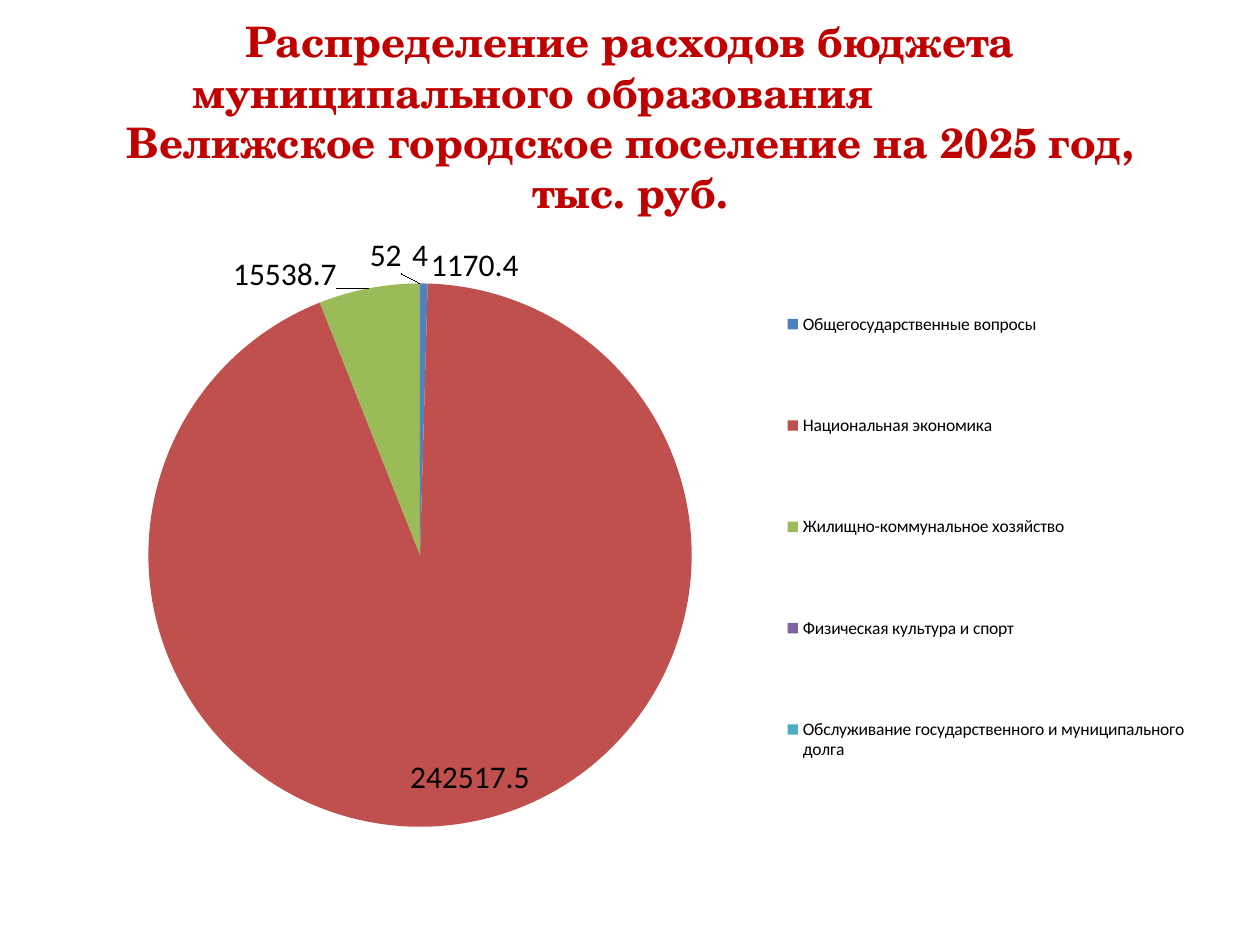
from lxml.etree import SubElement as Sub
from pptx import Presentation
from pptx.chart.data import CategoryChartData as Data
from pptx.dml.color import RGBColor as RGB
from pptx.enum.chart import XL_CHART_TYPE as Kind, XL_LABEL_POSITION as Pos
from pptx.enum.chart import XL_LEGEND_POSITION as Side
from pptx.enum.text import MSO_ANCHOR as Anchor, PP_ALIGN as Align
from pptx.oxml.ns import qn
from pptx.util import Pt

TITLE = [
    ("Распределение расходов бюджета", 0),
    ("муниципального образования", 111),
    ("Велижское городское поселение на 2025 год, тыс. руб.", 0),
]
OUT, IN = Pos.OUTSIDE_END, Pos.INSIDE_END
COSTS = [
    ("Общегосударственные вопросы", 1170.4, "4F81BD", OUT, (29, 4.5)),
    ("Национальная экономика", 242517.5, "C0504D", IN, (36.5, -11)),
    ("Жилищно-коммунальное хозяйство", 15538.7, "9BBB59", OUT, (-17.5, 7)),
    ("Физическая культура и спорт", 52, "8064A2", OUT, (-19.5, -1.2)),
    ("Обслуживание государственного и муниципального долга", 4, "4BACC6", OUT, (0, -1.2)),
]
THEME = {
    "title": {"name": "TeX Gyre Schola", "size": Pt(24), "bold": True, "color": "C00000"},
    "label": {"name": "Calibri", "size": Pt(18), "color": "000000"},
    "legend": {"name": "Calibri", "size": Pt(10), "color": "000000"},
}
PAGE = (720, 540)
HEAD = (36, 21.6, 648, 90)
PLOT = (36, 126, 648, 356.4)
PIE = (48.8, 36, 310.5, 310.5)
KEY = (410.8, 7, 233, 347.5)
EDGE = {"xMode": "edge", "yMode": "edge"}


def apply(obj, vals):
    for key, val in vals.items():
        setattr(obj, key, val)


def style(font, role):
    look = dict(THEME[role])
    font.color.rgb = RGB.from_string(look.pop("color"))
    apply(font, look)


def place(node, prior, box, modes):
    for old in node.findall(qn("c:layout")):
        node.remove(old)
    frame = Sub(node, qn("c:layout"))
    if prior is None:
        node.insert(0, frame)
    else:
        prior.addnext(frame)
    spot = Sub(frame, qn("c:manualLayout"))
    parts = {key: val / full for key, val, full in zip("xywh", box, PLOT[2:] * 2)}
    for key, val in {**modes, **parts}.items():
        Sub(spot, qn(f"c:{key}")).set("val", str(val))


def add_title(slide):
    frame = slide.shapes.add_textbox(*map(Pt, HEAD)).text_frame
    apply(frame, {"word_wrap": True, "vertical_anchor": Anchor.MIDDLE})
    for i, (text, right) in enumerate(TITLE):
        para = frame.add_paragraph() if i else frame.paragraphs[0]
        para.alignment = Align.CENTER
        para._p.get_or_add_pPr().set("marR", str(Pt(right)))
        run = para.add_run()
        run.text = text
        style(run.font, "title")


def add_pie(slide):
    data = Data()
    data.categories = [row[0] for row in COSTS]
    data.add_series("Series 1", [row[1] for row in COSTS])
    chart = slide.shapes.add_chart(Kind.PIE, *map(Pt, PLOT), data).chart
    apply(chart, {"has_title": False, "has_legend": True})
    style(chart.font, "label")
    apply(chart.legend, {"position": Side.RIGHT, "include_in_layout": False})
    style(chart.legend.font, "legend")
    key = chart.legend._element
    place(key, key.find(qn("c:legendPos")), KEY, EDGE)
    place(chart._chartSpace.chart.plotArea, None, PIE, {"layoutTarget": "inner", **EDGE})
    plot = chart.plots[0]
    plot.vary_by_categories = True
    series = plot.series[0]
    labels = series.data_labels
    labels.show_value = True
    style(labels.font, "label")
    for i, (_, _, color, side, shift) in enumerate(COSTS):
        point = series.points[i]
        point.format.fill.solid()
        point.format.fill.fore_color.rgb = RGB.from_string(color)
        label = point.data_label
        style(label.font, "label")
        label.position = side
        node = label._dLbl
        place(node, node.find(qn("c:idx")), shift, {})


def main():
    """Build the budget spending slide."""
    deck = Presentation()
    apply(deck, dict(zip(("slide_width", "slide_height"), map(Pt, PAGE))))
    slide = deck.slides.add_slide(deck.slide_layouts[6])
    add_title(slide)
    add_pie(slide)
    deck.save("out.pptx")


if __name__ == "__main__":
    main()
